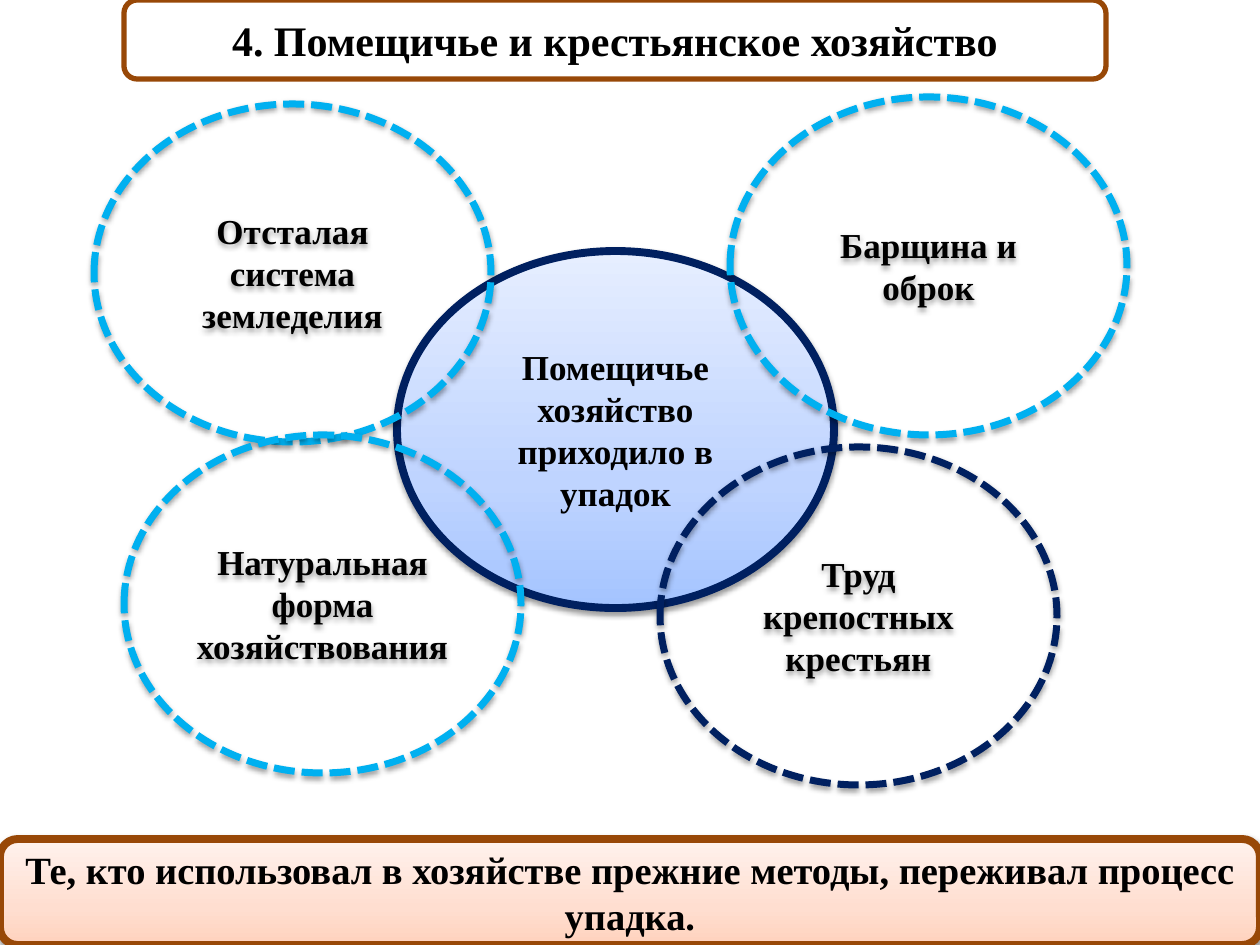
from dataclasses import dataclass
from typing import Optional

from lxml.etree import SubElement
from pptx import Presentation
from pptx.dml.color import RGBColor
from pptx.enum.dml import MSO_LINE_DASH_STYLE as Dash
from pptx.enum.shapes import MSO_SHAPE as Shape
from pptx.enum.text import MSO_ANCHOR as Anchor, PP_ALIGN as Align
from pptx.oxml.ns import qn
from pptx.util import Emu, Pt

PX = 914400 / 126
FONT = "Times New Roman"
COLORS = {"black": "000000", "brown": "984807", "navy": "002060", "sky": "00B0F0"}
GRADIENTS = {
    "peach": ((0, "FFD2BD"), (35, "FFDED0"), (100, "FFF2ED")),
    "blue": ((0, "A4C4FF"), (35, "BFD4FF"), (100, "E6EEFF")),
}
CIRCLE_WIDTH, CIRCLE_HEIGHT = 397, 338


@dataclass
class Panel:
    text: str
    left: int
    top: int
    width: int
    height: int
    line: str
    weight: float
    kind: Shape = Shape.ROUNDED_RECTANGLE
    size: int = 20
    gradient: Optional[str] = None
    dashed: bool = False
    shadow: bool = True


def px(length: int) -> Emu:
    return Emu(round(length * PX))


def color(name: str) -> RGBColor:
    return RGBColor.from_string(COLORS[name])


def write_text(box, text: str, *, size: int, ink: str = "black", bold: bool = True) -> None:
    frame = box.text_frame
    frame.word_wrap = True
    frame.vertical_anchor = Anchor.MIDDLE
    para = frame.paragraphs[0]
    para.alignment = Align.CENTER
    span = para.add_run()
    span.text = text
    span.font.name = FONT
    span.font.size = Pt(size)
    span.font.bold = bold
    span.font.color.rgb = color(ink)


def fill_gradient(box, name: str) -> None:
    """Run the stops from the bottom edge up to the top."""
    box.fill.gradient()
    box.fill.gradient_angle = 90
    stops = box._element.spPr.find(".//" + qn("a:gsLst"))
    for stop in list(stops):
        stops.remove(stop)
    for position, value in GRADIENTS[name]:
        stop = SubElement(stops, qn("a:gs"), pos=str(position * 1000))
        SubElement(stop, qn("a:srgbClr"), val=value)


def add_shadow(box) -> None:
    effects = box._element.spPr.find(qn("a:effectLst"))
    outer = SubElement(effects, qn("a:outerShdw"), blurRad=str(Pt(3.1)),
                       dist=str(Pt(1.6)), dir="5400000", rotWithShape="0")
    tint = SubElement(outer, qn("a:srgbClr"), val=COLORS["black"])
    SubElement(tint, qn("a:alpha"), val="38000")


def draw_panel(page, panel: Panel) -> None:
    box = page.shapes.add_shape(panel.kind, px(panel.left), px(panel.top),
                                px(panel.width), px(panel.height))
    if panel.gradient:
        fill_gradient(box, panel.gradient)
    else:
        box.fill.background()
    box.line.color.rgb = color(panel.line)
    box.line.width = Pt(panel.weight)
    if panel.dashed:
        box.line.dash_style = Dash.SQUARE_DOT
    box.shadow.inherit = False
    if panel.shadow:
        add_shadow(box)
    write_text(box, panel.text, size=panel.size)


def circle(text: str, left: int, top: int, line: str = "sky") -> Panel:
    return Panel(text, left, top, CIRCLE_WIDTH, CIRCLE_HEIGHT, line, 4,
                 kind=Shape.OVAL, dashed=True)


PANELS = [
    # Title and conclusion
    Panel("4. Помещичье и крестьянское хозяйство", 124, 0, 982, 79, "brown", 3,
          size=24, shadow=False),
    Panel("Те, кто использовал в хозяйстве прежние методы, переживал процесс упадка.",
          0, 839, 1260, 106, "brown", 4.5, size=22, gradient="peach"),
    # Central idea
    Panel("Помещичье хозяйство приходило в упадок", 397, 251, 437, 357, "navy", 4.5,
          kind=Shape.OVAL, gradient="blue"),
    # Surrounding causes
    circle("Барщина и оброк", 730, 97),
    circle("Отсталая система земледелия", 94, 104),
    circle("Натуральная форма хозяйствования", 124, 435),
    circle("Труд крепостных крестьян", 660, 447, line="navy"),
]


def main() -> None:
    deck = Presentation()
    deck.slide_width, deck.slide_height = px(1260), px(945)
    page = deck.slides.add_slide(deck.slide_layouts[6])
    for panel in PANELS:
        draw_panel(page, panel)
    deck.save("out.pptx")


if __name__ == "__main__":
    main()
